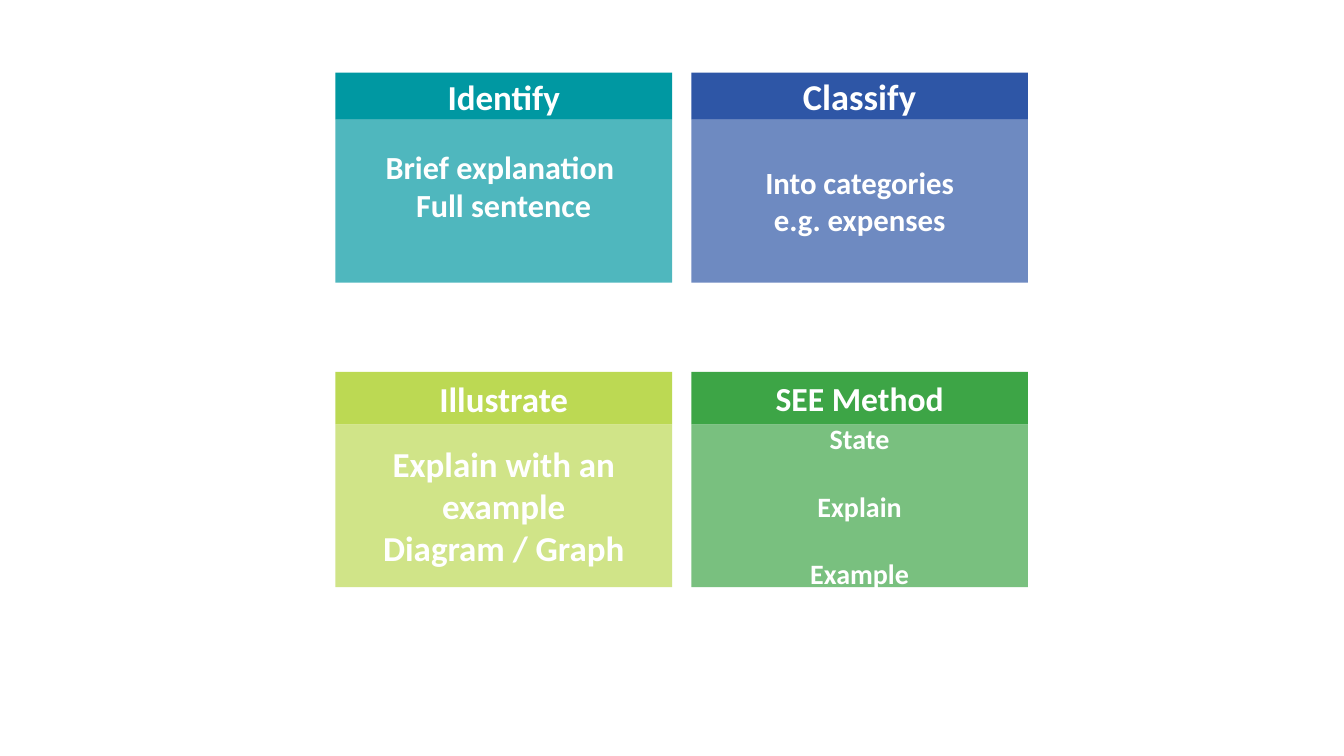
import lxml.etree
import pptx
import pptx.dml.color
import pptx.enum.shapes
import pptx.enum.text
import pptx.oxml.ns
import pptx.util

Pt = pptx.util.Pt
RGBColor = pptx.dml.color.RGBColor

WHITE = RGBColor(0xFF, 0xFF, 0xFF)
TEAL = RGBColor(0x00, 0x98, 0xA2)
BLUE = RGBColor(0x2E, 0x56, 0xA6)
LIME = RGBColor(0xBC, 0xD9, 0x53)
GREEN = RGBColor(0x3D, 0xA5, 0x46)

CARD_LEFT, CARD_WIDTH, COLUMN_STEP = 239.6, 240.5, 254.2
BODY_HEIGHT = 116.4
ROWS = [(51.9, 33.6), (265.7, 37.4)]  # header top, header height

# heading, heading size, body lines, body size, gap between lines, bottom inset, colour
CARDS = [
    ("Identify", 25, ["Brief explanation ", "Full sentence"], 23, 0, 25.6, TEAL),
    ("Classify", 26, ["Into categories", "e.g. expenses"], 22, 0, 3.6, BLUE),
    ("Illustrate", 25, ["Explain with an example", "Diagram / Graph"], 25, 0, 3.6, LIME),
    ("SEE Method", 24, ["State", "Explain", "Example"], 20, 24.4, 3.6, GREEN),
]

presentation = pptx.Presentation()
presentation.slide_width = Pt(960)
presentation.slide_height = Pt(540)
slide = presentation.slides.add_slide(presentation.slide_layouts[6])


def add_panel(left, top, height, colour, lines, size, gap=0, bottom_inset=3.6):
    """Add a filled rectangle with centred bold white lines."""
    panel = slide.shapes.add_shape(
        pptx.enum.shapes.MSO_SHAPE.RECTANGLE, Pt(left), Pt(top), Pt(CARD_WIDTH), Pt(height))
    panel.shadow.inherit = False
    panel.line.fill.background()
    panel.fill.solid()
    panel.fill.fore_color.rgb = colour
    frame = panel.text_frame
    frame.word_wrap = True
    frame.vertical_anchor = pptx.enum.text.MSO_ANCHOR.MIDDLE
    frame.margin_bottom = Pt(bottom_inset)
    frame.text = "\n".join(lines)
    for index, paragraph in enumerate(frame.paragraphs):
        paragraph.alignment = pptx.enum.text.PP_ALIGN.CENTER
        if index and gap:
            paragraph.space_before = Pt(gap)
        font = paragraph.runs[0].font
        font.name = "Calibri"
        font.size = Pt(size)
        font.bold = True
        font.color.rgb = WHITE
    return panel


for index, (heading, heading_size, lines, size, gap, inset, colour) in enumerate(CARDS):
    row, column = divmod(index, 2)
    left = CARD_LEFT + column * COLUMN_STEP
    top, header_height = ROWS[row]
    add_panel(left, top, header_height, colour, [heading], heading_size)
    body = add_panel(left, top + header_height, BODY_HEIGHT, colour, lines, size, gap, inset)
    body_colour = body.fill._xPr.find(".//" + pptx.oxml.ns.qn("a:srgbClr"))
    lxml.etree.SubElement(body_colour, pptx.oxml.ns.qn("a:alpha")).set("val", "69000")

presentation.save("out.pptx")
